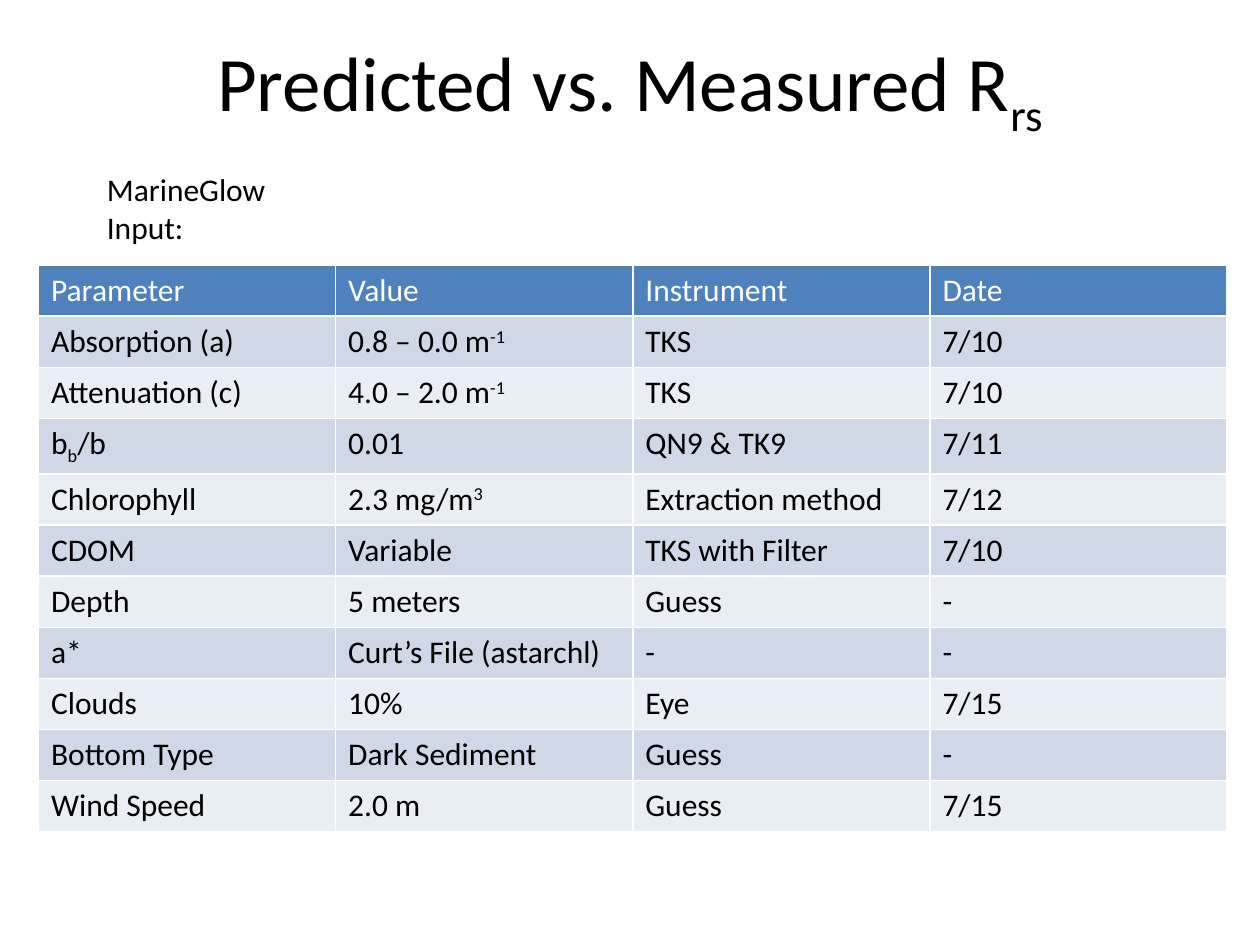
from pptx import Presentation
from pptx import util as u
from pptx.dml.color import RGBColor
from pptx.enum import text

BLACK = RGBColor(0, 0, 0)
WHITE = RGBColor(255, 255, 255)
BLUE = RGBColor(0x4F, 0x81, 0xBD)
BANDS = RGBColor(0xD0, 0xD8, 0xE8), RGBColor(0xE9, 0xED, 0xF4)
SUB, SUP = -25, 30  # baseline shift in percent

# Content: a cell is a string, or a list of (string, shift) runs
TITLE = [("Predicted vs. Measured R", 0), ("rs", SUB)]
LABEL = "MarineGlow Input:"
ROWS = [
    ("Parameter", "Value", "Instrument", "Date"),
    ("Absorption (a)", [("0.8 – 0.0 m", 0), ("-1", SUP)], "TKS", "7/10"),
    ("Attenuation (c)", [("4.0 – 2.0 m", 0), ("-1", SUP)], "TKS", "7/10"),
    ([("b", 0), ("b", SUB), ("/b", 0)], "0.01", "QN9 & TK9", "7/11"),
    ("Chlorophyll", [("2.3 mg/m", 0), ("3", SUP)], "Extraction method", "7/12"),
    ("CDOM", "Variable", "TKS with Filter", "7/10"),
    ("Depth", "5 meters", "Guess", "-"),
    ("a*", "Curt’s File (astarchl)", "-", "-"),
    ("Clouds", "10%", "Eye", "7/15"),
    ("Bottom Type", "Dark Sediment", "Guess", "-"),
    ("Wind Speed", "2.0 m", "Guess", "7/15"),
]
COL, ROW = 169.8, 29.2


def write(frame, runs, size=18, color=BLACK):
    if isinstance(runs, str):
        runs = [(runs, 0)]
    style = {"name": "Calibri", "size": u.Pt(size), "bold": False}
    for words, shift in runs:
        run = frame.paragraphs[0].add_run()
        run.text = words
        for key, value in style.items():
            setattr(run.font, key, value)
        run.font.color.rgb = color
        if shift:
            run._r.get_or_add_rPr().set("baseline", str(shift * 1000))


def add_text(slide, box, runs, size, wrap):
    frame = slide.shapes.add_textbox(*map(u.Pt, box)).text_frame
    frame.word_wrap = wrap
    write(frame, runs, size)
    return frame


def main():
    deck = Presentation()
    deck.slide_width, deck.slide_height = u.Pt(720), u.Pt(540)
    slide = deck.slides.add_slide(deck.slide_layouts[6])

    # Title and label
    frame = add_text(slide, (54, -8, 612, 116), TITLE, 44, True)
    frame.vertical_anchor = text.MSO_ANCHOR.MIDDLE
    frame.paragraphs[0].alignment = text.PP_ALIGN.CENTER
    add_text(slide, (54, 93.6, 144, 29), LABEL, 18, False)

    # Input table with banded rows
    count, width = len(ROWS), len(ROWS[0])
    size = map(u.Pt, (22, 151.5, COL * width, ROW * count))
    table = slide.shapes.add_table(count, width, *size).table
    for col in table.columns:
        col.width = u.Pt(COL)
    for i, row in enumerate(ROWS):
        table.rows[i].height = u.Pt(ROW)
        for j, runs in enumerate(row):
            cell = table.cell(i, j)
            cell.fill.solid()
            cell.fill.fore_color.rgb = BANDS[(i - 1) % 2] if i else BLUE
            write(cell.text_frame, runs, color=BLACK if i else WHITE)

    deck.save("out.pptx")


if __name__ == "__main__":
    main()
